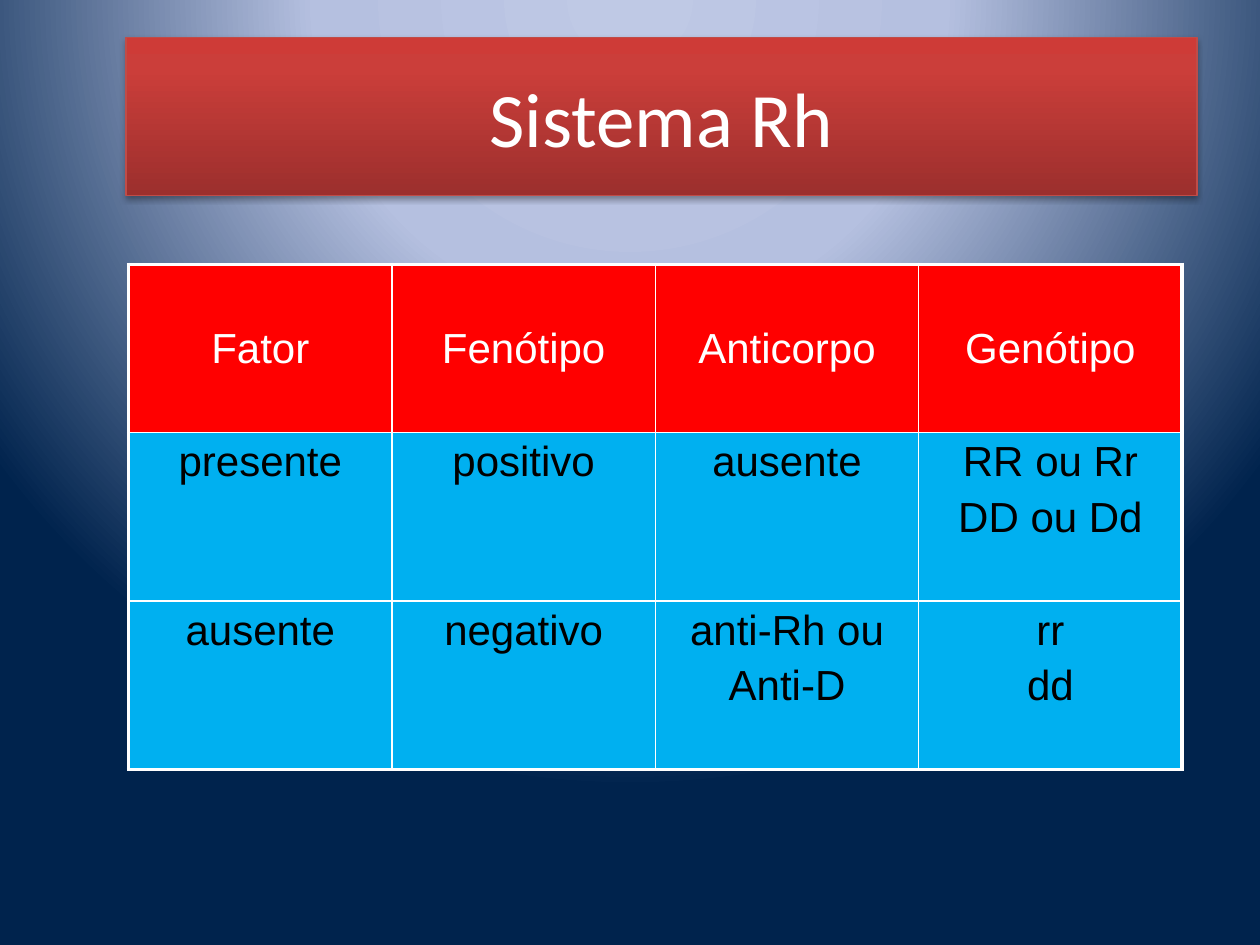
from pptx import Presentation
from pptx.dml.color import RGBColor
from pptx.enum.shapes import MSO_SHAPE
from pptx.enum.text import MSO_ANCHOR, PP_ALIGN
from pptx.oxml import parse_xml
from pptx.oxml.ns import nsdecls, qn
from pptx.util import Pt

color = RGBColor.from_string


def apply_gradient(parent, stops, direction):
    stop_xml = "".join(
        f'<a:gs pos="{position * 1000}"><a:srgbClr val="{value}"/></a:gs>'
        for position, value in stops
    )
    gradient = parse_xml(
        f'<a:gradFill {nsdecls("a")} rotWithShape="1">'
        f"<a:gsLst>{stop_xml}</a:gsLst>{direction}</a:gradFill>"
    )
    parent.replace(parent.find(qn("a:solidFill")), gradient)


deck = Presentation()
deck.slide_width, deck.slide_height = Pt(720), Pt(540)
page = deck.slides.add_slide(deck.slide_layouts[6])

page.background.fill.solid()
apply_gradient(
    page.element.find(".//" + qn("p:bgPr")),
    [(0, "BFC9E5"), (40, "B5C0E0"), (100, "00234D")],
    '<a:path path="circle"><a:fillToRect l="50000" t="-80000" r="50000" b="180000"/></a:path>',
)

title = page.shapes.add_shape(MSO_SHAPE.RECTANGLE, Pt(72), Pt(21.6), Pt(612), Pt(90))
title.fill.solid()
apply_gradient(
    title.element.spPr,
    [(0, "9C2F2D"), (80, "CB3E3A"), (100, "CE3B37")],
    '<a:lin ang="16200000" scaled="0"/>',
)
title.line.color.rgb = color("BF4C48")
title.line.width = Pt(0.75)
title.shadow.inherit = False
title.element.spPr.find(qn("a:effectLst")).append(parse_xml(
    f'<a:outerShdw {nsdecls("a")} blurRad="{Pt(3.1)}" dist="{Pt(1.8)}" dir="5400000" rotWithShape="0">'
    '<a:srgbClr val="000000"><a:alpha val="35000"/></a:srgbClr></a:outerShdw>'
))
title.text_frame.vertical_anchor = MSO_ANCHOR.MIDDLE
para = title.text_frame.paragraphs[0]
para.text = "Sistema Rh"
para.alignment = PP_ALIGN.CENTER
para.font.name = "Calibri"
para.font.size = Pt(44)
para.font.color.rgb = color("FFFFFF")

rows = [
    ["Fator", "Fenótipo", "Anticorpo", "Genótipo"],
    ["presente", "positivo", "ausente", "RR ou Rr\nDD ou Dd"],
    ["ausente", "negativo", "anti-Rh ou\nAnti-D", "rr\ndd"],
]
row_count, column_count = len(rows), len(rows[0])
table = page.shapes.add_table(
    row_count, column_count, Pt(73.5), Pt(151), Pt(602), Pt(288.75)
).table
for column in table.columns:
    column.width = Pt(150.5)
for row in table.rows:
    row.height = Pt(96.25)

for row_index, texts in enumerate(rows):
    is_header = row_index == 0
    for column_index, text in enumerate(texts):
        cell = table.cell(row_index, column_index)
        cell.text = text
        cell.fill.solid()
        cell.fill.fore_color.rgb = color("FF0000" if is_header else "00B0F0")
        cell.vertical_anchor = MSO_ANCHOR.MIDDLE if is_header else MSO_ANCHOR.TOP
        for para in cell.text_frame.paragraphs:
            para.alignment = PP_ALIGN.CENTER
            para.space_before = Pt(4.8)
            para.font.name = "Arial"
            para.font.size = Pt(24)
            para.font.bold = False
            para.font.color.rgb = color("FFFFFF" if is_header else "000000")
        outer_sides = {
            "lnL": column_index == 0,
            "lnR": column_index == column_count - 1,
            "lnT": is_header,
            "lnB": row_index == row_count - 1,
        }
        properties = cell._tc.get_or_add_tcPr()
        for order, (side, is_outer) in enumerate(outer_sides.items()):
            properties.insert(order, parse_xml(
                f'<a:{side} {nsdecls("a")} w="{Pt(2.25 if is_outer else 1)}">'
                f'<a:solidFill><a:srgbClr val="FFFFFF"/></a:solidFill></a:{side}>'
            ))

deck.save("out.pptx")
